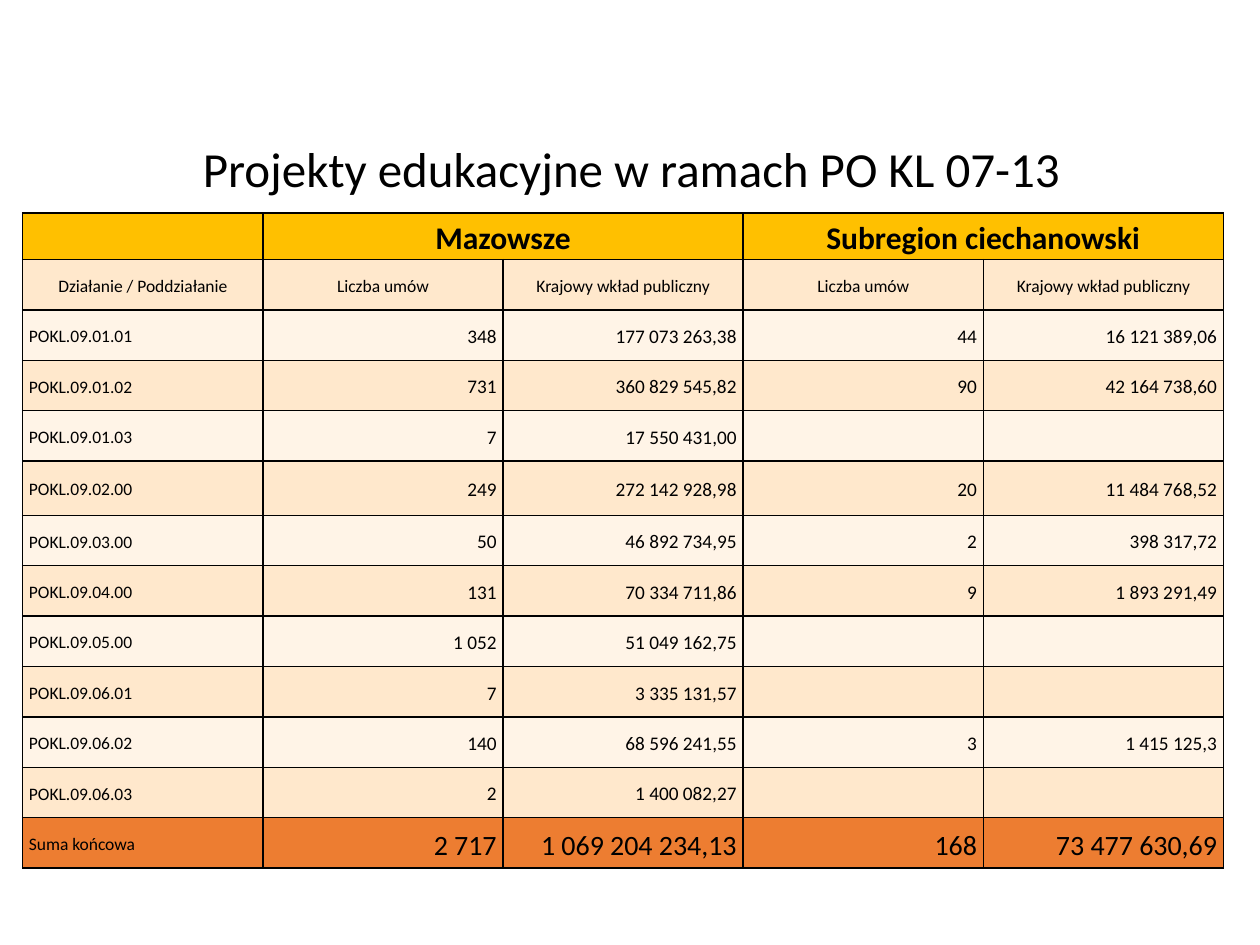
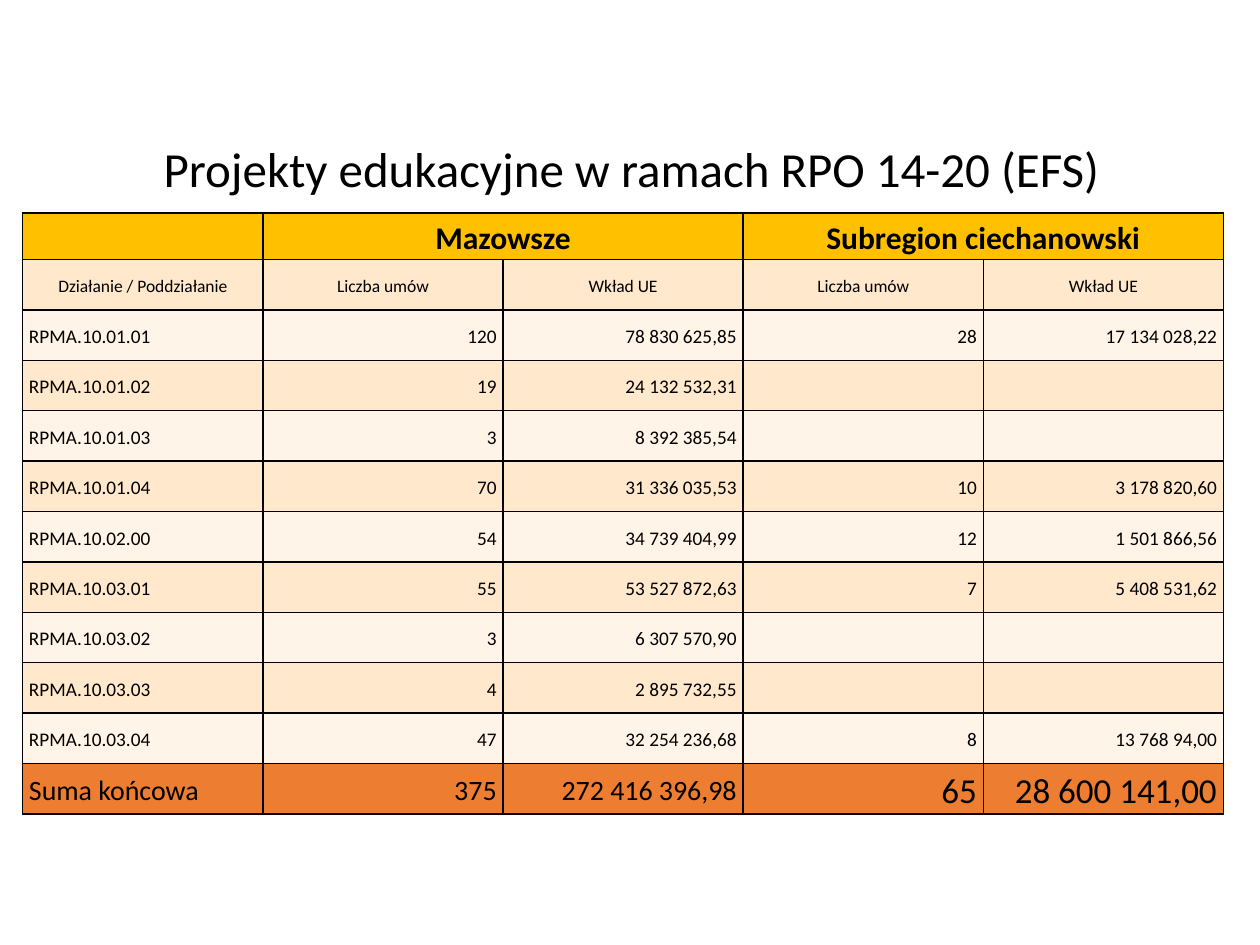
from lxml import etree
from pptx import Presentation
from pptx import util as u
from pptx.dml import color
from pptx.enum import text
from pptx.oxml import ns

PX = 9144
FONT = "Calibri"
BLACK, GOLD, ORANGE = "000000", "FFC000", "ED7D31"
BANDS = ["FFF4E7", "FFE8CC"]
COLUMN_WIDTH = 953 / 5
HEADER_HEIGHT, ROW_HEIGHT = 37, 40
LEFT, CENTER, RIGHT = text.PP_ALIGN.LEFT, text.PP_ALIGN.CENTER, text.PP_ALIGN.RIGHT

REPORTS = [
    {
        "title": "Projekty edukacyjne w ramach PO KL 07-13",
        "amount": "Krajowy wkład publiczny",
        "label_size": 10,
        "total_sizes": [10, 16, 16, 16, 16],
        "tall_rows": {5: 43},
        "rows": [
            ["POKL.09.01.01", "348", "177 073 263,38", "44", "16 121 389,06"],
            ["POKL.09.01.02", "731", "360 829 545,82", "90", "42 164 738,60"],
            ["POKL.09.01.03", "7", "17 550 431,00", "", ""],
            ["POKL.09.02.00", "249", "272 142 928,98", "20", "11 484 768,52"],
            ["POKL.09.03.00", "50", "46 892 734,95", "2", "398 317,72"],
            ["POKL.09.04.00", "131", "70 334 711,86", "9", "1 893 291,49"],
            ["POKL.09.05.00", "1 052", "51 049 162,75", "", ""],
            ["POKL.09.06.01", "7", "3 335 131,57", "", ""],
            ["POKL.09.06.02", "140", "68 596 241,55", "3", "1 415 125,3"],
            ["POKL.09.06.03", "2", "1 400 082,27", "", ""],
            ["Suma końcowa", "2 717", "1 069 204 234,13", "168", "73 477 630,69"],
        ],
    },
    {
        "title": "Projekty edukacyjne w ramach RPO 14-20 (EFS)",
        "amount": "Wkład UE",
        "label_size": 11,
        "total_sizes": [16, 16, 16, 20, 20],
        "tall_rows": {},
        "rows": [
            ["RPMA.10.01.01", "120", "78 830 625,85", "28", "17 134 028,22"],
            ["RPMA.10.01.02", "19", "24 132 532,31", "", ""],
            ["RPMA.10.01.03", "3", "8 392 385,54", "", ""],
            ["RPMA.10.01.04", "70", "31 336 035,53", "10", "3 178 820,60"],
            ["RPMA.10.02.00", "54", "34 739 404,99", "12", "1 501 866,56"],
            ["RPMA.10.03.01", "55", "53 527 872,63", "7", "5 408 531,62"],
            ["RPMA.10.03.02", "3", "6 307 570,90", "", ""],
            ["RPMA.10.03.03", "4", "2 895 732,55", "", ""],
            ["RPMA.10.03.04", "47", "32 254 236,68", "8", "13 768 94,00"],
            ["Suma końcowa", "375", "272 416 396,98", "65", "28 600 141,00"],
        ],
    },
]


def paint(target, hex_color):
    if hasattr(target, "solid"):
        target.solid()
        target = target.fore_color
    target.rgb = color.RGBColor.from_string(hex_color)


def write(paragraph, words, size, alignment, spacing, bold=False):
    paragraph.alignment = alignment
    paragraph.line_spacing = spacing
    if words:
        run = paragraph.add_run()
        run.text = words
        run.font.name = FONT
        run.font.size = u.Pt(size)
        run.font.bold = bold
        paint(run.font.color, BLACK)


presentation = Presentation()
presentation.slide_width = 1000 * PX
presentation.slide_height = 750 * PX

for report in REPORTS:
    slide = presentation.slides.add_slide(presentation.slide_layouts[6])
    title = slide.shapes.add_textbox(70 * PX, 106 * PX, 862 * PX, 61 * PX)
    title.text_frame.word_wrap = True
    title.text_frame.vertical_anchor = text.MSO_ANCHOR.MIDDLE
    write(title.text_frame.paragraphs[0], report["title"], 28, CENTER, 0.9)

    regions = ["", "Mazowsze", "", "Subregion ciechanowski", ""]
    headings = ["Działanie / Poddziałanie"] + ["Liczba umów", report["amount"]] * 2
    rows = [regions, headings] + report["rows"]
    heights = [HEADER_HEIGHT] + [
        report["tall_rows"].get(index, ROW_HEIGHT) for index in range(1, len(rows))
    ]
    frame = slide.shapes.add_table(
        len(rows), 5, 18 * PX, 169 * PX, 953 * PX, sum(heights) * PX
    )
    table = frame.table
    table.first_row = False
    table.horz_banding = False
    for column in table.columns:
        column.width = int(COLUMN_WIDTH * PX)
    for first in (1, 3):
        table.cell(0, first).merge(table.cell(0, first + 1))

    for row_index, values in enumerate(rows):
        table.rows[row_index].height = heights[row_index] * PX
        for column_index, value in enumerate(values):
            fill = BANDS[row_index % 2]
            size = 11 if column_index else report["label_size"]
            alignment = RIGHT if column_index else LEFT
            if row_index == 0:
                fill, size, alignment = GOLD, 18, CENTER
            elif row_index == 1:
                size, alignment = 10, CENTER
            elif row_index == len(rows) - 1:
                fill, size = ORANGE, report["total_sizes"][column_index]

            cell = table.cell(row_index, column_index)
            cell.margin_left = cell.margin_right = 5 * PX
            cell.margin_top = cell.margin_bottom = 0
            cell.vertical_anchor = text.MSO_ANCHOR.MIDDLE
            paint(cell.fill, fill)
            paragraph = cell.text_frame.paragraphs[0]
            write(paragraph, value, size, alignment, 1.15, row_index == 0)

            properties = cell.fill._xPr
            for position, side in enumerate(("a:lnL", "a:lnR", "a:lnT", "a:lnB")):
                line = etree.Element(ns.qn(side), w=str(u.Pt(1)))
                solid = etree.SubElement(line, ns.qn("a:solidFill"))
                etree.SubElement(solid, ns.qn("a:srgbClr"), val=BLACK)
                properties.insert(position, line)

presentation.save("out.pptx")
